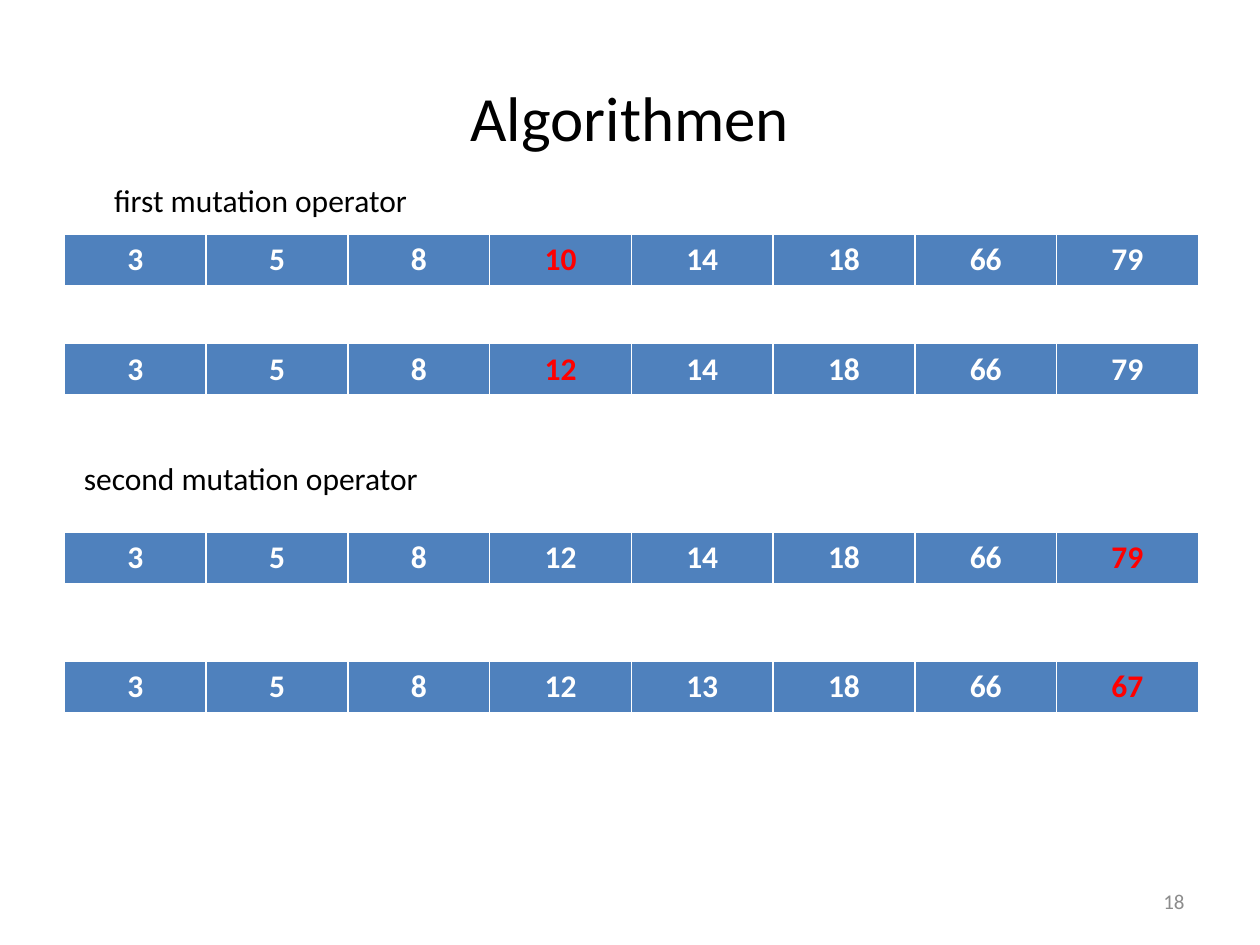
from pptx import Presentation
from pptx.dml.color import RGBColor
from pptx.enum.text import MSO_ANCHOR as Anchor, PP_ALIGN as Align
from pptx.util import Pt

BLACK, WHITE, RED, BLUE, GREY = "000000", "FFFFFF", "FF0000", "4F81BD", "8C8C8C"

# text, (left, top, width, height), format
TEXTS = [
    ("Algorithmen", (36, 21.6, 648, 90),
     dict(size=36, align=Align.CENTER, anchor=Anchor.MIDDLE)),
    ("first mutation operator", (54, 100, 590, 29), dict(inset=11.2)),
    ("second mutation operator", (36.7, 258.5, 590, 29), dict(inset=11.2)),
    ("18", (516, 500.5, 168, 28.8),
     dict(size=12, color=GREY, align=Align.RIGHT, anchor=Anchor.MIDDLE)),
]

# top, values, index of the mutated value
CHROMOSOMES = [
    (134, [3, 5, 8, 10, 14, 18, 66, 79], 3),
    (196.4, [3, 5, 8, 12, 14, 18, 66, 79], 3),
    (304.2, [3, 5, 8, 12, 14, 18, 66, 79], 7),
    (378, [3, 5, 8, 12, 13, 18, 66, 67], 7),
]
TABLE_LEFT, GENE_WIDTH, GENE_HEIGHT = 36.85, 81, 28.2


def rgb(color):
    return RGBColor.from_string(color)


def write(frame, text, size=18, color=BLACK, bold=False, align=Align.LEFT):
    para = frame.paragraphs[0]
    para.alignment = align
    span = para.add_run()
    span.text = text
    font = span.font
    font.name, font.size, font.bold = "Calibri", Pt(size), bold
    font.color.rgb = rgb(color)


def add_text(page, text, bounds, anchor=Anchor.TOP, inset=7.2, **style):
    frame = page.shapes.add_textbox(*map(Pt, bounds)).text_frame
    frame.word_wrap = True
    frame.vertical_anchor = anchor
    frame.margin_left = Pt(inset)
    write(frame, text, **style)


def add_chromosome(page, top, genes, mutated):
    """Draw one row of genes with the mutated one in red."""
    table = page.shapes.add_table(
        1, len(genes), Pt(TABLE_LEFT), Pt(top),
        Pt(GENE_WIDTH * len(genes)), Pt(GENE_HEIGHT)).table
    for index, gene in enumerate(genes):
        cell = table.cell(0, index)
        cell.fill.solid()
        cell.fill.fore_color.rgb = rgb(BLUE)
        write(cell.text_frame, str(gene), bold=True, align=Align.CENTER,
              color=RED if index == mutated else WHITE)


def main():
    deck = Presentation()
    deck.slide_width, deck.slide_height = Pt(720), Pt(540)
    page = deck.slides.add_slide(deck.slide_layouts[6])
    for chromosome in CHROMOSOMES:
        add_chromosome(page, *chromosome)
    for text, bounds, style in TEXTS:
        add_text(page, text, bounds, **style)
    deck.save("out.pptx")


if __name__ == "__main__":
    main()
